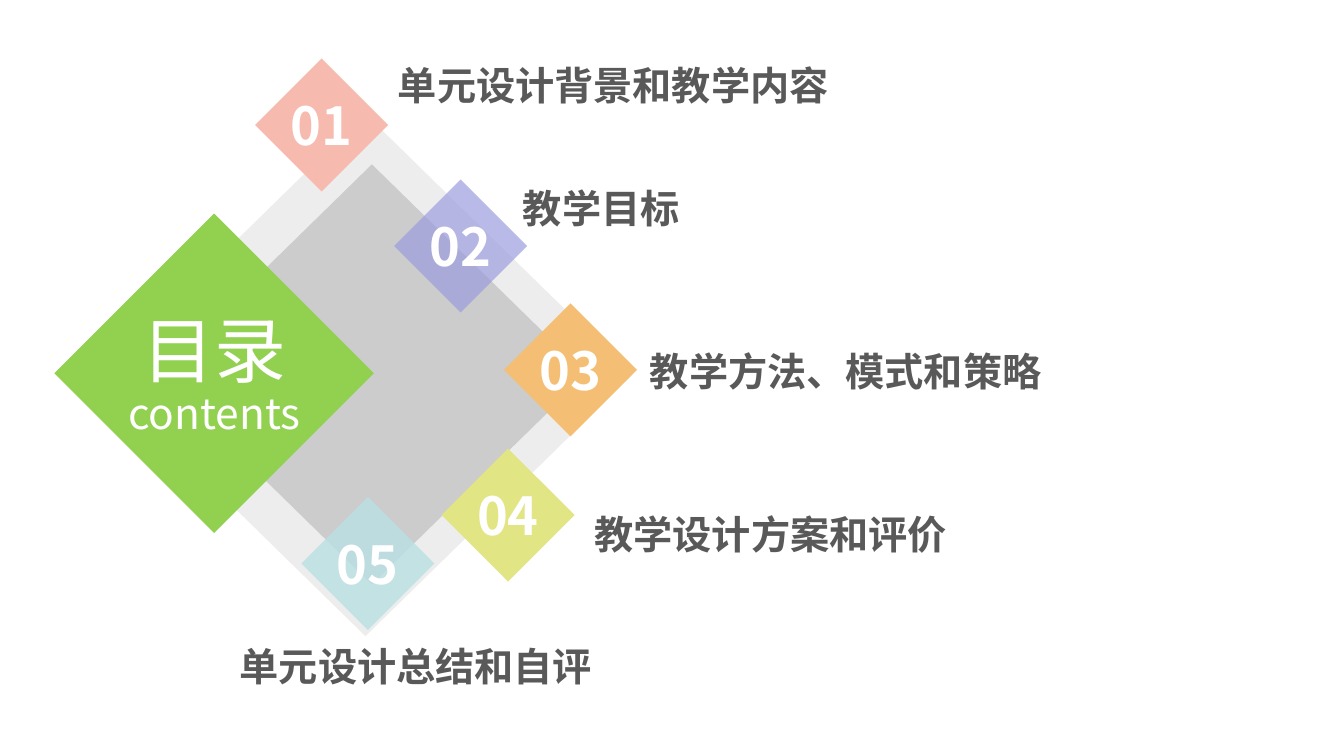
from lxml import etree
from pptx import Presentation
from pptx.dml.color import RGBColor
from pptx.enum import shapes, text
from pptx.oxml.ns import qn
from pptx.util import Pt

FONT = "Noto Sans CJK SC"
WHITE = RGBColor(0xFF, 0xFF, 0xFF)
DARK_GRAY = RGBColor(0x59, 0x59, 0x59)
GRAY = RGBColor(0xCC, 0xCC, 0xCC)
GREEN = RGBColor(0x92, 0xD0, 0x50)
PINK = RGBColor(0xF6, 0xBA, 0xAE)
VIOLET = RGBColor(0x9C, 0x9C, 0xDF)
ORANGE = RGBColor(0xF4, 0xBF, 0x74)
LIME = RGBColor(0xE1, 0xE5, 0x83)
AQUA = RGBColor(0xBB, 0xE0, 0xE3)

# Box (left, top, width, height), colour, opacity in percent
BACKDROPS = [
    ((70.6, 81.4, 380.9, 373), GRAY, 35),
    ((112.3, 117.4, 306.7, 300.2), GRAY, 100),
]
TITLE_DIAMOND = (38.9, 152.6, 228.2, 228.2)
TITLE_BOX = (57.6, 225.4, 191.5, 90.7)
TITLE_LINES = [("目录", 51.3), ("contents", 30.3)]

# Label, label position, diamond position, colour, opacity in percent
CHAPTERS = [
    ("单元设计背景和教学内容", (277.2, 40.3), (182.2, 41.8), PINK, 100),
    ("教学目标", (366.5, 128.2), (281.5, 128.2), VIOLET, 69),
    ("教学方法、模式和策略", (457.2, 244.8), (360, 216.7), ORANGE, 100),
    ("教学设计方案和评价", (417.6, 360.7), (315.4, 320.4), LIME, 100),
    ("单元设计总结和自评", (164.2, 455), (215.3, 355), AQUA, 84),
]
CHAPTER_DIAMOND_SIZE = (95, 95)
LABEL_SIZE = (566.6, 41)
# Drawing order: 02 and 04 lie above the other diamonds
DIAMOND_ORDER = [1, 3, 5, 2, 4]


def add_diamond(slide, box, color, opacity=100):
    diamond = slide.shapes.add_shape(
        shapes.MSO_SHAPE.DIAMOND, *[Pt(length) for length in box])
    diamond.shadow.inherit = False
    diamond.line.fill.background()
    diamond.fill.solid()
    diamond.fill.fore_color.rgb = color
    if opacity < 100:
        color_element = diamond.element.spPr.find(qn("a:solidFill"))[0]
        etree.SubElement(color_element, qn("a:alpha"), val=str(opacity * 1000))
    return diamond


def set_font(paragraph, size, color, bold):
    """Format a paragraph for both Latin and East Asian characters."""
    font = paragraph.font
    font.size = Pt(size)
    font.bold = bold
    font.color.rgb = color
    font.name = FONT
    properties = paragraph._p.pPr.find(qn("a:defRPr"))
    etree.SubElement(properties, qn("a:ea"), typeface=FONT)


def set_margins(frame, horizontal, vertical):
    frame.margin_left = frame.margin_right = Pt(horizontal)
    frame.margin_top = frame.margin_bottom = Pt(vertical)


def add_title(slide):
    diamond = add_diamond(slide, TITLE_DIAMOND, GREEN)
    title = slide.shapes.title
    title.left, title.top, title.width, title.height = [
        Pt(length) for length in TITLE_BOX]
    diamond.element.addnext(title.element)
    frame = title.text_frame
    frame.text = "\n".join(line for line, size in TITLE_LINES)
    frame.word_wrap = True
    frame.auto_size = text.MSO_AUTO_SIZE.NONE
    frame.vertical_anchor = text.MSO_ANCHOR.TOP
    set_margins(frame, 0, 0)
    for paragraph, (line, size) in zip(frame.paragraphs, TITLE_LINES):
        paragraph.alignment = text.PP_ALIGN.CENTER
        paragraph.line_spacing = 0.9
        set_font(paragraph, size, WHITE, False)


def add_number(slide, number):
    label, label_position, position, color, opacity = CHAPTERS[number - 1]
    diamond = add_diamond(slide, position + CHAPTER_DIAMOND_SIZE, color, opacity)
    frame = diamond.text_frame
    frame.text = f"{number:02d}"
    frame.word_wrap = False
    frame.vertical_anchor = text.MSO_ANCHOR.MIDDLE
    set_margins(frame, 9.4, 5)
    paragraph = frame.paragraphs[0]
    paragraph.alignment = text.PP_ALIGN.CENTER
    set_font(paragraph, 37.4, WHITE, True)


def add_label(slide, label, position):
    box = slide.shapes.add_textbox(
        *[Pt(length) for length in position + LABEL_SIZE])
    frame = box.text_frame
    frame.text = label
    frame.word_wrap = True
    frame.auto_size = text.MSO_AUTO_SIZE.SHAPE_TO_FIT_TEXT
    set_font(frame.paragraphs[0], 28, DARK_GRAY, True)


def main():
    presentation = Presentation()
    presentation.slide_width, presentation.slide_height = Pt(960), Pt(540)
    title_only = presentation.slide_layouts[5]
    slide = presentation.slides.add_slide(title_only)
    for box, color, opacity in BACKDROPS:
        add_diamond(slide, box, color, opacity)
    add_title(slide)
    for number in DIAMOND_ORDER:
        add_number(slide, number)
    for label, position, *diamond in CHAPTERS:
        add_label(slide, label, position)
    presentation.save("out.pptx")


if __name__ == "__main__":
    main()
